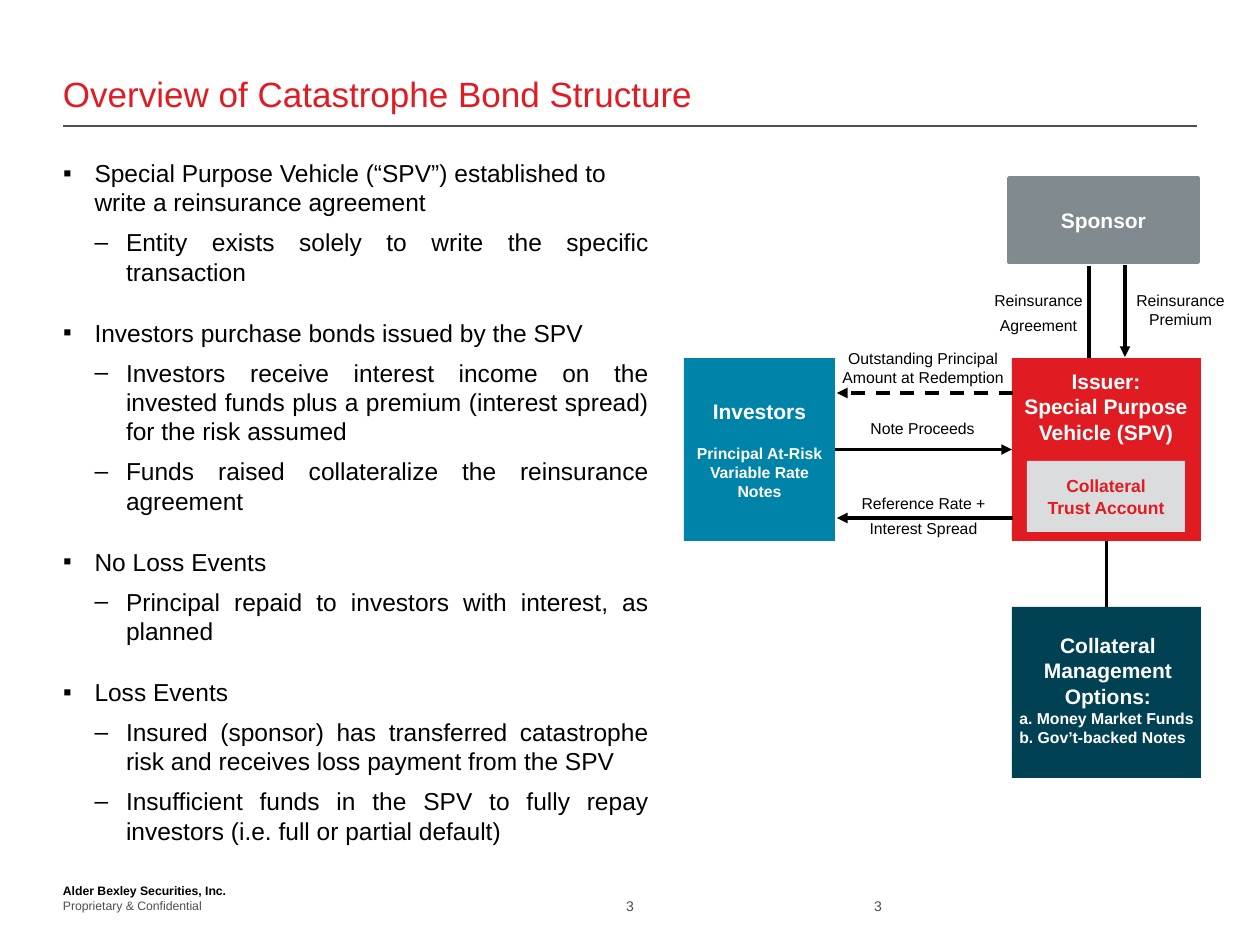
from collections import namedtuple

from lxml.etree import SubElement
from pptx import Presentation
from pptx.dml.color import RGBColor
from pptx.enum.dml import MSO_LINE
from pptx.enum.shapes import MSO_CONNECTOR, MSO_SHAPE
from pptx.enum.text import MSO_ANCHOR, PP_ALIGN
from pptx.oxml.ns import qn
from pptx.util import Emu, Pt

FONT = "Arial"
RED, GREY, BLACK, WHITE = "E11B22", "4D4F53", "000000", "FFFFFF"
LEFT, CENTER, RIGHT, JUSTIFY = PP_ALIGN.LEFT, PP_ALIGN.CENTER, PP_ALIGN.RIGHT, PP_ALIGN.JUSTIFY
BOTTOM, MIDDLE, TOP = MSO_ANCHOR.BOTTOM, MSO_ANCHOR.MIDDLE, MSO_ANCHOR.TOP

Box = namedtuple("Box", "left top width height")
Line = namedtuple("Line", "text size color bold align before bullet level",
                  defaults=(BLACK, False, LEFT, 0, None, 0))

BULLETS = [
    (0, LEFT, "Special Purpose Vehicle (“SPV”) established to write a reinsurance agreement"),
    (1, JUSTIFY, "Entity exists solely to write the specific transaction"),
    (0, LEFT, "Investors purchase bonds issued by the SPV"),
    (1, JUSTIFY, "Investors receive interest income on the invested funds plus a premium "
                 "(interest spread) for the risk assumed"),
    (1, JUSTIFY, "Funds raised collateralize the reinsurance agreement"),
    (0, JUSTIFY, "No Loss Events"),
    (1, JUSTIFY, "Principal repaid to investors with interest, as planned"),
    (0, JUSTIFY, "Loss Events"),
    (1, JUSTIFY, "Insured (sponsor) has transferred catastrophe risk and receives loss "
                 "payment from the SPV"),
    (1, JUSTIFY, "Insufficient funds in the SPV to fully repay investors (i.e. full or "
                 "partial default)"),
]


def px(length):
    return Emu(round(length * 914400 / 126))


def rgb(color):
    return RGBColor.from_string(color)


def within(box, left, top, width, height):
    return Box(box.left + left, box.top + top, width, height)


def add_bullet(paragraph, line):
    properties = paragraph._p.get_or_add_pPr()
    properties.set("marL", str(px(63 if line.level else 31.5)))
    properties.set("indent", str(-px(31.5)))
    color = SubElement(properties, qn("a:buClr"))
    SubElement(color, qn("a:srgbClr"), val=BLACK)
    SubElement(properties, qn("a:buFont"), typeface=FONT)
    SubElement(properties, qn("a:buChar"), char=line.bullet)
    paragraph.level = line.level


def write(frame, lines, anchor):
    frame.word_wrap = True
    frame.vertical_anchor = anchor
    for number, line in enumerate(lines):
        paragraph = frame.add_paragraph() if number else frame.paragraphs[0]
        paragraph.text = line.text
        paragraph.alignment = line.align
        if number and line.before:
            paragraph.space_before = Pt(line.before)
        if line.bullet:
            add_bullet(paragraph, line)
        font = paragraph.font
        font.name, font.size, font.bold = FONT, Pt(line.size), line.bold
        font.color.rgb = rgb(line.color)


def add_text(slide, box, lines, anchor=TOP, inset=False):
    frame = slide.shapes.add_textbox(*map(px, box)).text_frame
    if not inset:
        frame.margin_left = frame.margin_right = frame.margin_top = frame.margin_bottom = 0
    write(frame, lines, anchor)


def add_block(slide, box, fill, lines=()):
    block = slide.shapes.add_shape(MSO_SHAPE.RECTANGLE, *map(px, box))
    block.shadow.inherit = False
    block.fill.solid()
    block.fill.fore_color.rgb = rgb(fill)
    block.line.fill.background()
    write(block.text_frame, lines, MIDDLE)
    return block


def add_line(slide, start, end, color=BLACK, width=2, arrow=False, dashed=False):
    line = slide.shapes.add_connector(MSO_CONNECTOR.STRAIGHT, *map(px, (*start, *end)))
    line.line.color.rgb = rgb(color)
    line.line.width = Pt(width)
    if dashed:
        line.line.dash_style = MSO_LINE.DASH
    if arrow:
        SubElement(line.line._get_or_add_ln(), qn("a:tailEnd"), type="triangle")
    SubElement(line._element.spPr, qn("a:effectLst"))
    return line


def join(line, start, start_side, end, end_side):
    line.begin_connect(start, start_side)
    line.end_connect(end, end_side)


def centered(texts, size, color, bold=True, before=0):
    return [Line(text, size, color, bold, CENTER, before) for text in texts]


def add_header(slide, box):
    rule = box.top + box.height
    add_line(slide, (box.left, rule), (box.left + box.width, rule), GREY, 0.75)
    add_text(slide, within(box, 0, 0, box.width, 72),
             [Line("Overview of Catastrophe Bond Structure", 20, RED)], BOTTOM)


def add_bullets(slide, box):
    add_text(slide, box, [
        Line(text, 14, align=align, before=6 if level else 18,
             bullet="–" if level else "▪", level=level)
        for level, align, text in BULLETS])


def add_diagram(slide, box):
    def place(*area):
        return within(box, *area)

    def link(x1, y1, x2, y2, **style):
        return add_line(slide, (box.left + x1, box.top + y1),
                        (box.left + x2, box.top + y2), **style)

    sponsor = add_block(slide, place(325, 1, 189, 84), "818A8F",
                        centered(["Sponsor"], 12, WHITE))
    sponsor.line.color.rgb = rgb("818A8F")
    sponsor.line.width = Pt(2)
    issuer = add_block(slide, place(328, 181, 189, 183), RED)
    add_text(slide, place(323, 182, 198, 95),
             centered(["Issuer:", "Special Purpose Vehicle (SPV)"], 12, WHITE), MIDDLE, True)
    add_block(slide, place(343, 284, 158, 71), "DBDCDD",
              centered(["Collateral", "Trust Account"], 10, RED))
    investors = add_block(slide, place(0, 181, 151, 183), "0083A9",
                          centered(["Investors"], 12, WHITE)
                          + centered(["Principal At-Risk Variable Rate Notes"], 9, WHITE,
                                     before=11))
    options = add_block(slide, place(328, 430, 189, 171), "004254")
    add_text(slide, place(323, 415, 202, 195),
             centered(["Collateral Management Options:"], 12, WHITE)
             + [Line(text, 9, WHITE, True)
                for text in ("a. Money Market Funds", "b. Gov’t-backed Notes")],
             MIDDLE, True)

    link(405, 181, 405, 89)
    link(441, 88, 441, 180, arrow=True)
    link(329, 216, 153, 216, arrow=True, dashed=True)
    link(329, 341, 153, 341, arrow=True)
    join(link(151, 272, 328, 272, arrow=True), investors, 3, issuer, 1)
    join(link(422, 364, 422, 430), issuer, 2, options, 0)

    for area, texts, before in [
        ((290, 108, 129, 68), ["Reinsurance", "Agreement"], 3),
        ((417, 108, 159, 62), ["Reinsurance", "Premium"], 0),
        ((130, 166, 218, 60), ["Outstanding Principal Amount at Redemption"], 0),
        ((117, 236, 243, 38), ["Note Proceeds"], 0),
        ((106, 311, 267, 68), ["Reference Rate +", "Interest Spread"], 3),
    ]:
        add_text(slide, place(*area), centered(texts, 9, BLACK, False, before), inset=True)


def add_footer(slide, box):
    add_text(slide, within(box, 0, 2, 416, 39),
             [Line("Alder Bexley Securities, Inc.", 7, BLACK, True),
              Line("Proprietary & Confidential", 7, GREY)], BOTTOM)
    for left, align in ((547, CENTER), (779, RIGHT)):
        add_text(slide, within(box, left, 0, 40, box.height),
                 [Line("3", 8, GREY, align=align)], BOTTOM)


def main():
    deck = Presentation()
    deck.slide_width, deck.slide_height = px(1260), px(945)
    slide = deck.slides.add_slide(deck.slide_layouts[6])
    add_header(slide, Box(63, 42, 1134, 84))
    add_bullets(slide, Box(63, 158, 586, 682))
    add_diagram(slide, Box(684, 177, 576, 601))
    add_footer(slide, Box(63, 872, 819, 42))
    deck.save("out.pptx")


if __name__ == "__main__":
    main()
